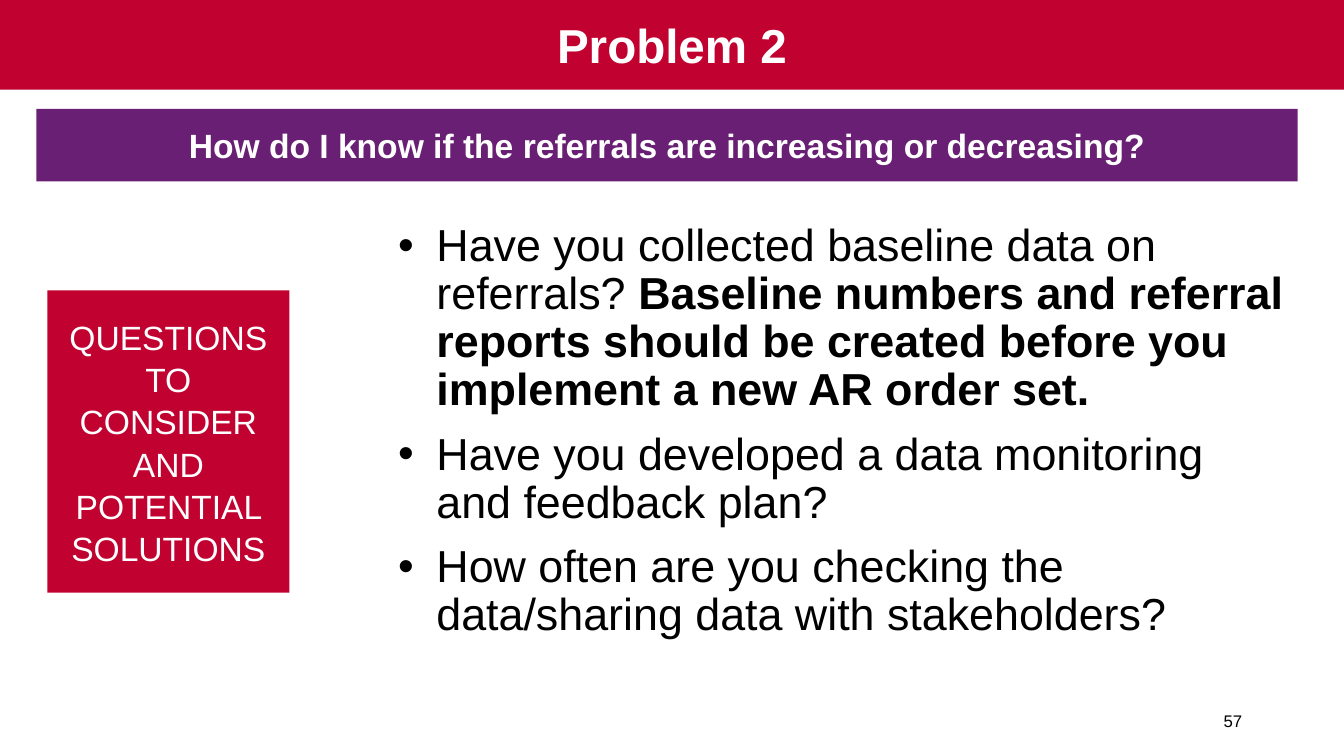
import pptx
import pptx.util
import pptx.dml.color
import pptx.enum.shapes
import pptx.enum.text
import pptx.oxml.ns
from dataclasses import dataclass
from lxml import etree

ALIGN = pptx.enum.text.PP_ALIGN
ANCHOR = pptx.enum.text.MSO_ANCHOR


@dataclass(frozen=True)
class Theme:
    font: str = "Arial"
    red: str = "C10230"
    purple: str = "691F74"
    white: str = "FFFFFF"
    black: str = "000000"
    title: int = 34
    banner: int = 24
    body: int = 32
    number: int = 12


def px(n):
    """Turn px, 100 to the inch, into EMU."""
    return pptx.util.Emu(n * 9144)


def rgb(value):
    return pptx.dml.color.RGBColor.from_string(value)


def apply(obj, values):
    for name, value in values.items():
        setattr(obj, name, value)


class SlideBuilder:
    def __init__(self, prs, theme):
        self.theme = theme
        self.s = prs.slides.add_slide(prs.slide_layouts[5])

    def place(self, sp, box):
        apply(sp, dict(zip(("left", "top", "width", "height"), map(px, box))))

    def fill(self, sp, color):
        sp.fill.solid()
        sp.fill.fore_color.rgb = rgb(color)

    def frame(self, sp, anchor):
        tf = sp.text_frame
        apply(tf, {"word_wrap": True, "vertical_anchor": anchor,
                   "auto_size": pptx.enum.text.MSO_AUTO_SIZE.NONE})
        return tf

    def add_text(self, p, runs, size, color, **fmt):
        """Fill a paragraph with (text, bold) runs."""
        apply(p, fmt)
        for text, bold in runs:
            r = p.add_run()
            r.text = text
            apply(r.font, {"name": self.theme.font, "size": pptx.util.Pt(size), "bold": bold})
            r.font.color.rgb = rgb(color)

    def title(self, text, box):
        sp = self.s.shapes.title
        self.place(sp, box)
        self.fill(sp, self.theme.red)
        tf = self.frame(sp, ANCHOR.MIDDLE)
        self.add_text(tf.paragraphs[0], [(text, True)], self.theme.title, self.theme.white,
                      alignment=ALIGN.CENTER)

    def panel(self, text, box, color, bold=False, spacing=1.0):
        sp = self.s.shapes.add_shape(pptx.enum.shapes.MSO_SHAPE.RECTANGLE, *map(px, box))
        sp.shadow.inherit = False
        self.fill(sp, color)
        sp.line.fill.background()
        tf = self.frame(sp, ANCHOR.MIDDLE)
        self.add_text(tf.paragraphs[0], [(text, bold)], self.theme.banner, self.theme.white,
                      alignment=ALIGN.CENTER, line_spacing=spacing)

    def bullets(self, items, box):
        tf = self.frame(self.s.shapes.add_textbox(*map(px, box)), ANCHOR.TOP)
        gap = pptx.util.Pt(6)
        for i, runs in enumerate(items):
            p = tf.add_paragraph() if i else tf.paragraphs[0]
            self.add_text(p, runs, self.theme.body, self.theme.black,
                          line_spacing=0.89, space_before=gap, space_after=gap)
            pPr = p._p.get_or_add_pPr()
            pPr.set("marL", str(px(38)))
            pPr.set("indent", str(-px(38)))
            etree.SubElement(pPr, pptx.oxml.ns.qn("a:buFont"), typeface=self.theme.font)
            etree.SubElement(pPr, pptx.oxml.ns.qn("a:buChar"), char="•")

    def number(self, text, box):
        tf = self.frame(self.s.shapes.add_textbox(*map(px, box)), ANCHOR.MIDDLE)
        self.add_text(tf.paragraphs[0], [(text, False)], self.theme.number, self.theme.black,
                      alignment=ALIGN.RIGHT)


def main():
    prs = pptx.Presentation()
    apply(prs, {"slide_width": px(1333), "slide_height": px(750)})
    theme = Theme()
    page = SlideBuilder(prs, theme)
    page.title("Problem 2", (0, 0, 1333, 89))
    page.panel("How do I know if the referrals are increasing or decreasing?",
               (36, 108, 1251, 72), theme.purple, bold=True)
    page.panel("QUESTIONS TO CONSIDER AND POTENTIAL SOLUTIONS",
               (47, 288, 240, 300), theme.red, spacing=1.05)
    page.bullets([
        [("Have you collected baseline data on referrals? ", False),
         ("Baseline numbers and referral reports should be created before you "
          "implement a new AR order set.", True)],
        [("Have you developed a data monitoring and feedback plan?", False)],
        [("How often are you checking the data/sharing data with stakeholders?", False)],
    ], (385, 217, 902, 456))
    page.number("57", (942, 695, 300, 40))
    prs.save("out.pptx")


if __name__ == "__main__":
    main()
